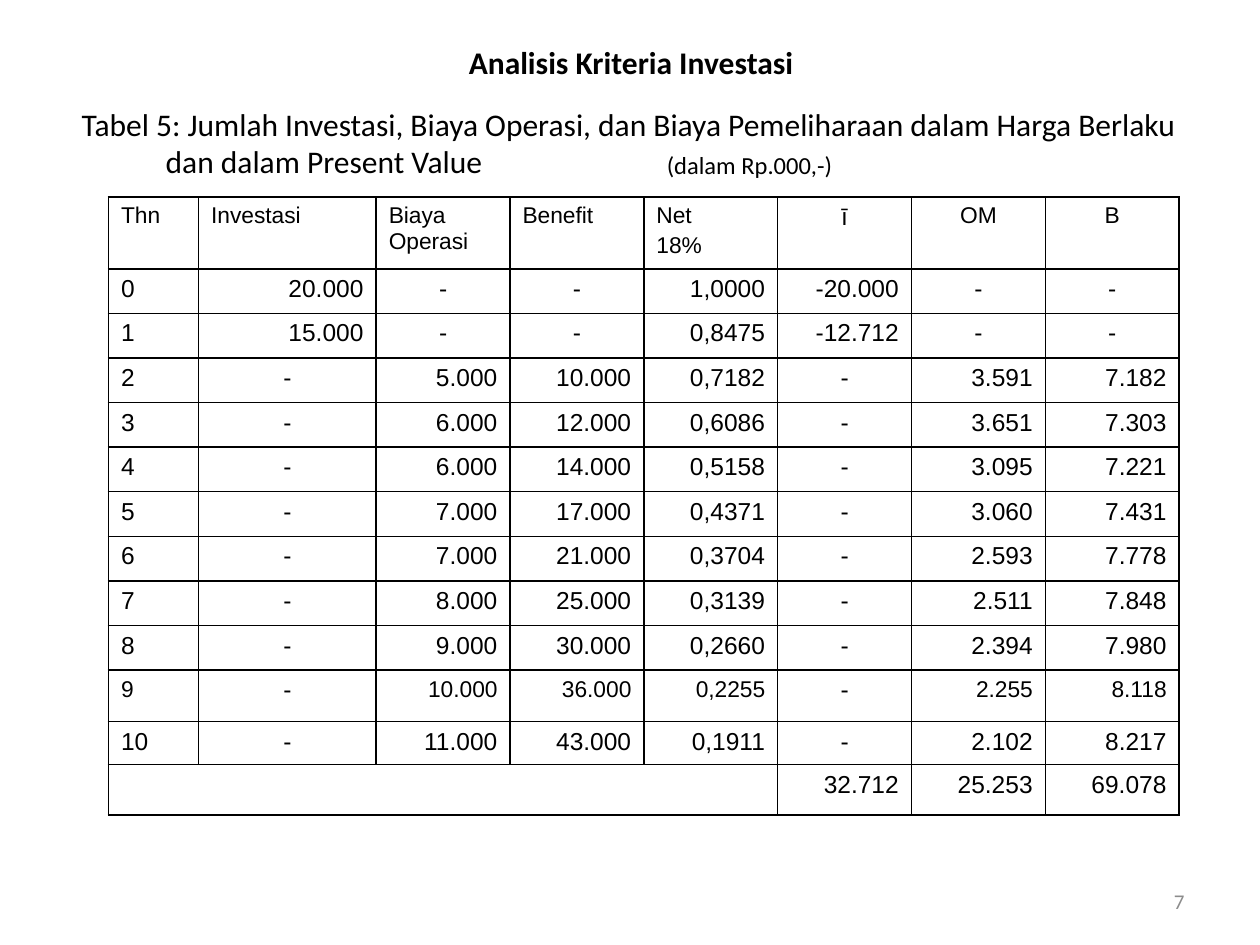
"""Build the investment criteria slide with its present value table."""
from dataclasses import dataclass

from lxml import etree
from pptx import Presentation
from pptx.dml.color import RGBColor
from pptx.enum.text import MSO_ANCHOR, PP_ALIGN
from pptx.oxml.ns import qn
from pptx.util import Pt

LEFT, MID, RIGHT = PP_ALIGN.LEFT, PP_ALIGN.CENTER, PP_ALIGN.RIGHT
TOP, CENTRE = MSO_ANCHOR.TOP, MSO_ANCHOR.MIDDLE
BLACK, GREY = "000000", "8C8C8C"
WIDTHS = [51.5, 101.5] + [76.5] * 6
HEIGHTS = [41] + [25.5] * 9 + [29.5, 24.5, 24.5]
SMALL_ROW = 10
ROWS = [line.split("|") for line in (
    "Thn|Investasi|Biaya Operasi|Benefit|Net\n18%|ī|OM|B",
    "0|20.000|-|-|1,0000|-20.000|-|-",
    "1|15.000|-|-|0,8475|-12.712|-|-",
    "2|-|5.000|10.000|0,7182|-|3.591|7.182",
    "3|-|6.000|12.000|0,6086|-|3.651|7.303",
    "4|-|6.000|14.000|0,5158|-|3.095|7.221",
    "5|-|7.000|17.000|0,4371|-|3.060|7.431",
    "6|-|7.000|21.000|0,3704|-|2.593|7.778",
    "7|-|8.000|25.000|0,3139|-|2.511|7.848",
    "8|-|9.000|30.000|0,2660|-|2.394|7.980",
    "9|-|10.000|36.000|0,2255|-|2.255|8.118",
    "10|-|11.000|43.000|0,1911|-|2.102|8.217",
    "|||||32.712|25.253|69.078",
)]


@dataclass
class Label:
    text: str
    box: tuple[float, float, float, float]
    size: float
    align: PP_ALIGN = LEFT
    anchor: MSO_ANCHOR = TOP
    inset: tuple[float, float] = (7.2, 3.6)
    color: str = BLACK
    bold: bool = False
    hang: float = 0


TITLE = Label("Analisis Kriteria Investasi", (36.7, 3.6, 648, 64), 18,
              MID, CENTRE, bold=True)
LABELS = [
    Label("7", (516, 500.5, 168, 28.8), 12, RIGHT, CENTRE, color=GREY),
    Label("Tabel 5: Jumlah Investasi, Biaya Operasi, dan Biaya Pemeliharaan "
          "dalam Harga Berlaku dan dalam Present Value",
          (39.6, 56.2, 641.5, 417.6), 18, hang=48),
    Label("(dalam Rp.000,-)", (381, 85.6, 120, 17.2), 14, inset=(0, 0)),
]


def paint(value: str) -> RGBColor:
    """Turn a hex string into a colour."""
    return RGBColor.from_string(value)


def write(para, text: str, size: float, face: str, color: str = BLACK,
          bold: bool = False) -> None:
    """Add one styled run to a paragraph."""
    run = para.add_run()
    run.text = text
    font = run.font
    font.size, font.name, font.bold = Pt(size), face, bold
    font.color.rgb = paint(color)


def place(shape, label: Label) -> None:
    """Position a text shape and fill it from its label."""
    shape.left, shape.top, shape.width, shape.height = map(Pt, label.box)
    frame = shape.text_frame
    frame.word_wrap = True
    frame.vertical_anchor = label.anchor
    frame.margin_left = frame.margin_right = Pt(label.inset[0])
    frame.margin_top = frame.margin_bottom = Pt(label.inset[1])
    para = frame.paragraphs[0]
    para.alignment = label.align
    if label.hang:
        props = para._p.get_or_add_pPr()
        props.set("marL", str(Pt(label.hang)))
        props.set("indent", str(-Pt(label.hang)))
    write(para, label.text, label.size, "Calibri", label.color, label.bold)


def rule(cell) -> None:
    """Draw thin black borders around an unfilled cell."""
    props = cell._tc.get_or_add_tcPr()
    for side in ("lnL", "lnR", "lnT", "lnB"):
        line = etree.SubElement(props, qn(f"a:{side}"), w=str(Pt(1)))
        fill = etree.SubElement(line, qn("a:solidFill"))
        etree.SubElement(fill, qn("a:srgbClr"), val=BLACK)
    cell.fill.background()


def style(row: int, col: int, text: str) -> tuple[PP_ALIGN, float]:
    """Choose the alignment and text size of a cell."""
    if row == 0:
        return (LEFT if col < 5 else MID), (14 if text == "ī" else 13)
    size = 13 if row == SMALL_ROW and text != "-" else 14
    if col == 0:
        return LEFT, size
    return (MID if text == "-" else RIGHT), size


def fill_cell(cell, row: int, col: int, text: str) -> None:
    """Write a cell, one paragraph for each line."""
    align, size = style(row, col, text)
    frame = cell.text_frame
    for num, part in enumerate(text.split("\n")):
        para = frame.add_paragraph() if num else frame.paragraphs[0]
        para.alignment = align
        if num:
            para.space_before = Pt(2.6)
        write(para, part, size, "Arial")
    rule(cell)


def add_grid(slide) -> None:
    """Add the cost and benefit table."""
    table = slide.shapes.add_table(
        len(ROWS), len(WIDTHS), Pt(62), Pt(112.5),
        Pt(sum(WIDTHS)), Pt(sum(HEIGHTS))).table
    table.first_row = table.horz_banding = False
    for col, width in zip(table.columns, WIDTHS):
        col.width = Pt(width)
    for row, height in zip(table.rows, HEIGHTS):
        row.height = Pt(height)
    last = len(ROWS) - 1
    table.cell(last, 0).merge(table.cell(last, 4))
    for row, texts in enumerate(ROWS):
        for col, text in enumerate(texts):
            fill_cell(table.cell(row, col), row, col, text)


def main() -> None:
    """Build and save the slide."""
    deck = Presentation()
    deck.slide_width, deck.slide_height = Pt(720), Pt(540)
    slide = deck.slides.add_slide(deck.slide_layouts[5])
    place(slide.shapes.title, TITLE)
    for label in LABELS:
        place(slide.shapes.add_textbox(*map(Pt, label.box)), label)
    add_grid(slide)
    deck.save("out.pptx")


if __name__ == "__main__":
    main()
